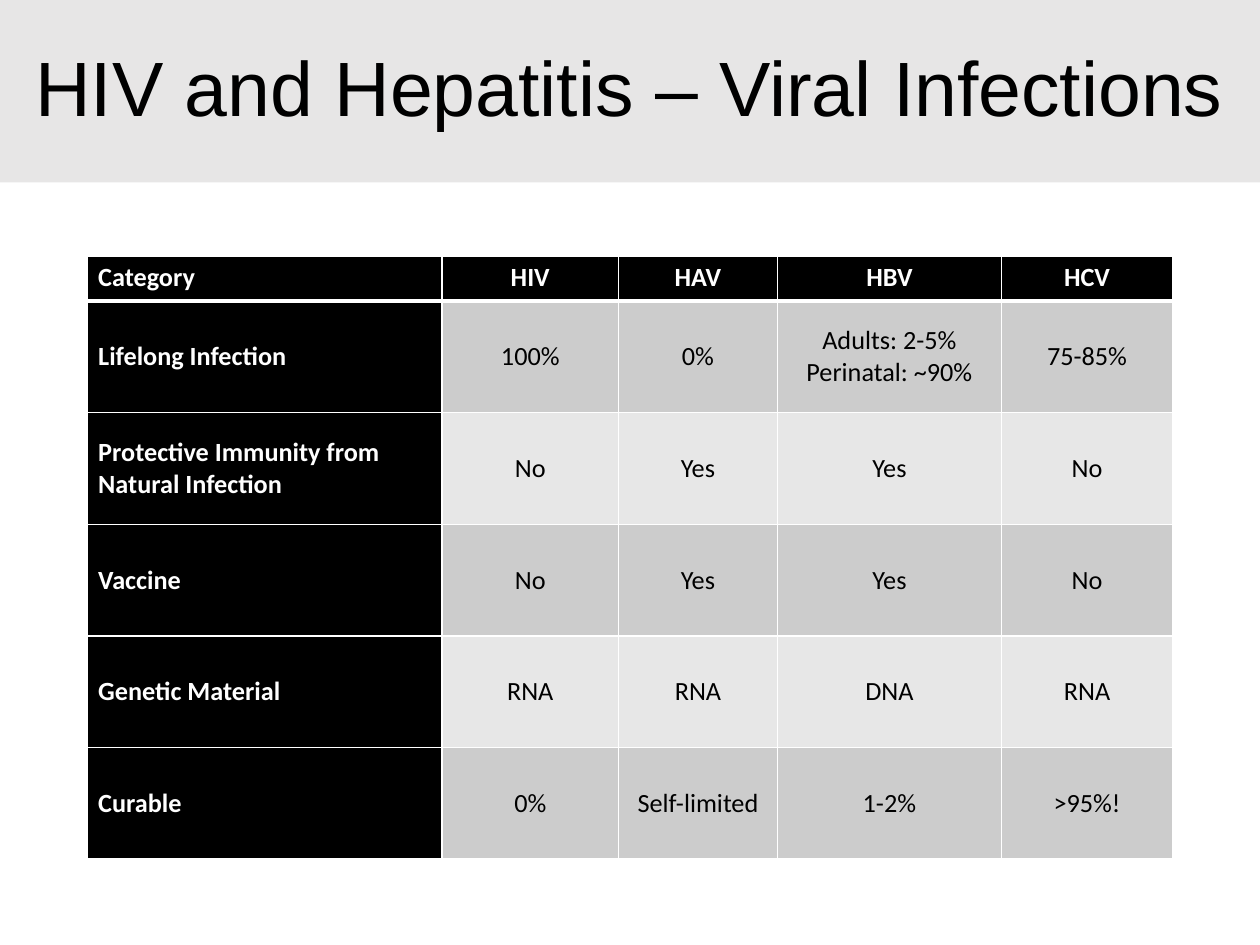
from dataclasses import dataclass

from lxml.etree import SubElement as Sub
from pptx import Presentation
from pptx.dml.color import RGBColor as Rgb
from pptx.enum.shapes import MSO_SHAPE as Shape
from pptx.enum.text import MSO_ANCHOR as Anchor, PP_ALIGN as Align
from pptx.oxml.ns import qn
from pptx.util import Cm, Pt

HUES = {
    "black": "000000",
    "white": "FFFFFF",
    "band": "E7E6E6",
    "dark": "CCCCCC",
    "light": "E7E7E7",
}
WIDTHS = [7.16, 3.56, 3.2, 4.52, 3.45]
HEAD = ["Category", "HIV", "HAV", "HBV", "HCV"]


@dataclass
class Trait:
    name: str
    vals: list[str]


TRAITS = [
    Trait("Lifelong Infection", ["100%", "0%", "Adults: 2-5%\nPerinatal: ~90%", "75-85%"]),
    Trait("Protective Immunity from Natural Infection", ["No", "Yes", "Yes", "No"]),
    Trait("Vaccine", ["No", "Yes", "Yes", "No"]),
    Trait("Genetic Material", ["RNA", "RNA", "DNA", "RNA"]),
    Trait("Curable", ["0%", "Self-limited", "1-2%", ">95%!"]),
]


def hue(key: str) -> Rgb:
    return Rgb.from_string(HUES[key])


def style(font, face: str, size: float, key: str, bold: bool = False) -> None:
    font.name, font.size, font.bold = face, Pt(size), bold
    font.color.rgb = hue(key)


def edge(cell, row: int) -> None:
    props = cell._tc.get_or_add_tcPr()
    sizes = {"L": 1, "R": 1, "T": 3 if row == 1 else 1, "B": 3 if row == 0 else 1}
    for side, size in sizes.items():
        line = Sub(props, qn(f"a:ln{side}"), w=str(Pt(size)))
        Sub(Sub(line, qn("a:solidFill")), qn("a:srgbClr"), val=HUES["white"])


def write(cell, text: str, row: int, col: int) -> None:
    label = row == 0 or col == 0
    edge(cell, row)
    cell.fill.solid()
    cell.fill.fore_color.rgb = hue("black" if label else "dark" if row % 2 else "light")
    cell.margin_left = cell.margin_right = Cm(0.23)
    cell.margin_top = cell.margin_bottom = Cm(0.11)
    cell.vertical_anchor = Anchor.MIDDLE if row else Anchor.TOP
    cell.text_frame.text = text
    for para in cell.text_frame.paragraphs:
        para.alignment = Align.CENTER if col else Align.LEFT
        for run in para.runs:
            style(run.font, "Calibri", 15, "white" if label else "black", label)


def title(slide, text: str) -> None:
    box = slide.shapes.add_shape(Shape.RECTANGLE, 0, 0, Cm(25.4), Cm(3.68))
    box.shadow.inherit = False
    box.fill.solid()
    box.fill.fore_color.rgb = hue("band")
    box.line.fill.background()
    frame = box.text_frame
    frame.word_wrap = True
    frame.vertical_anchor = Anchor.MIDDLE
    frame.text = text
    para = frame.paragraphs[0]
    para.alignment = Align.CENTER
    para.line_spacing = 0.9
    style(para.runs[0].font, "Arial", 44, "black")


def grid(slide) -> None:
    rows = [HEAD] + [[t.name, *t.vals] for t in TRAITS]
    highs = [0.91] + [2.25] * len(TRAITS)
    table = slide.shapes.add_table(
        len(rows), len(HEAD), Cm(1.75), Cm(5.16), Cm(sum(WIDTHS)), Cm(sum(highs))
    ).table
    for col, wide in zip(table.columns, WIDTHS):
        col.width = Cm(wide)
    for r, (high, texts) in enumerate(zip(highs, rows)):
        table.rows[r].height = Cm(high)
        for c, text in enumerate(texts):
            write(table.cell(r, c), text, r, c)


def main() -> None:
    deck = Presentation()
    deck.slide_width, deck.slide_height = Cm(25.4), Cm(19.05)
    slide = deck.slides.add_slide(deck.slide_layouts[6])
    title(slide, "HIV and Hepatitis – Viral Infections")
    grid(slide)
    deck.save("out.pptx")


if __name__ == "__main__":
    main()
